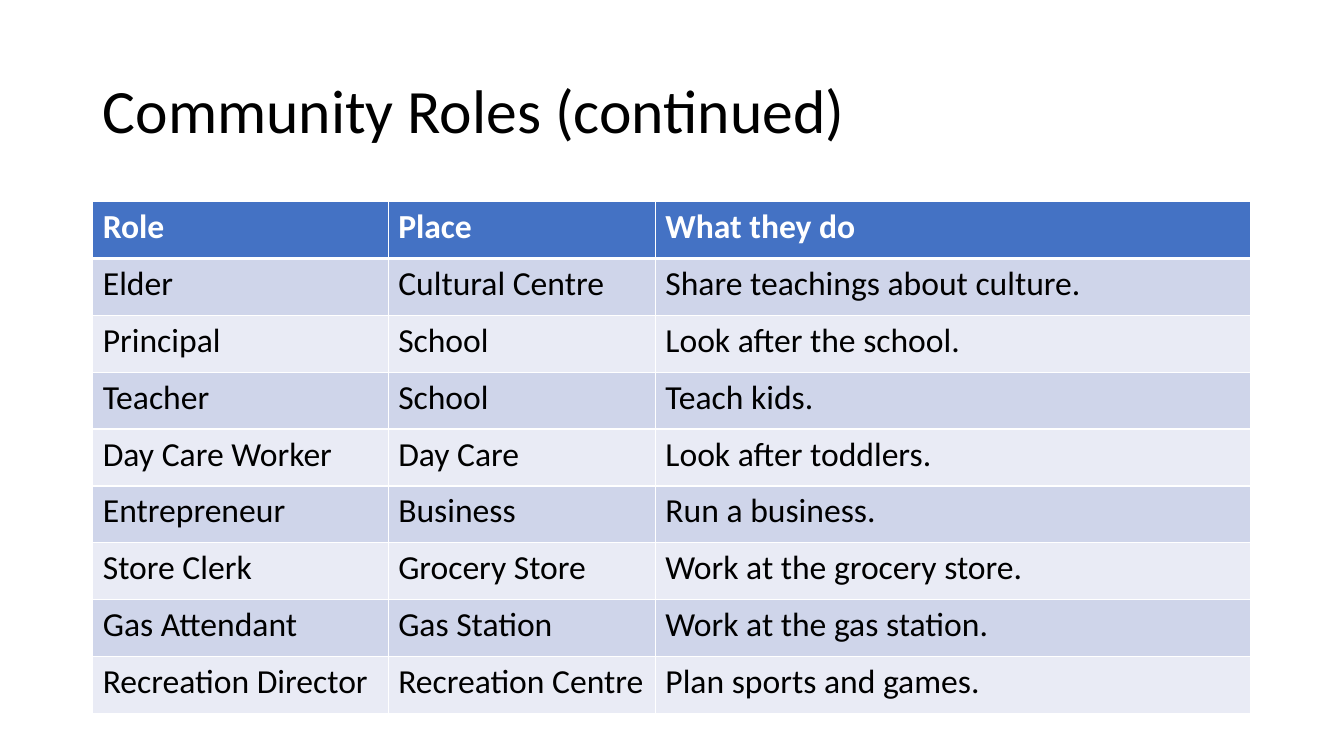
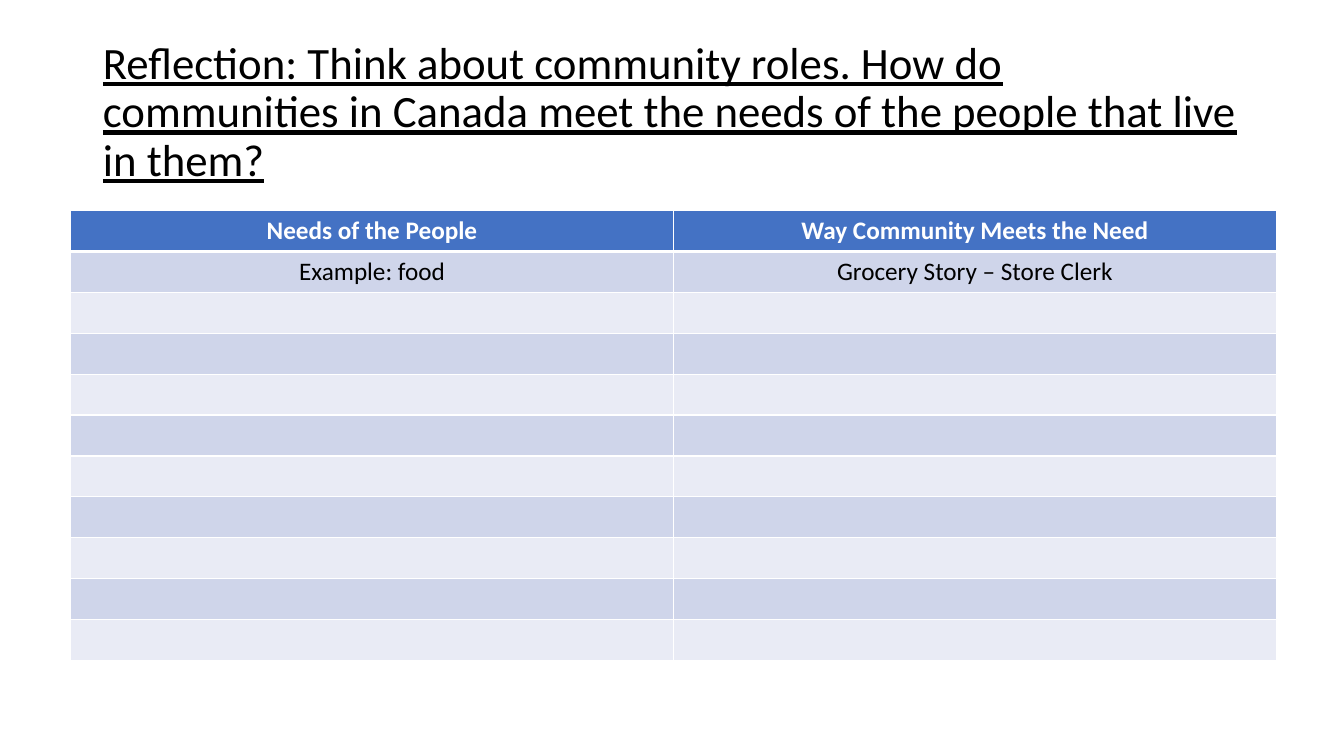
from lxml import etree
from pptx import Presentation
from pptx.dml.color import RGBColor
from pptx.enum import text
from pptx.oxml import ns
from pptx.util import Inches, Pt

FONT = "Calibri"
BLACK = RGBColor(0x00, 0x00, 0x00)
WHITE = RGBColor(0xFF, 0xFF, 0xFF)
HEADER_BLUE = RGBColor(0x44, 0x72, 0xC4)
BANDS = (RGBColor(0xCF, 0xD5, 0xEA), RGBColor(0xE9, 0xEB, 0xF5))
TITLE_BOX = (0.92, 0.4, 11.5, 1.45)
TITLE_ONLY = 5

ROLES = [
    ("Role", "Place", "What they do"),
    ("Elder", "Cultural Centre", "Share teachings about culture."),
    ("Principal", "School", "Look after the school."),
    ("Teacher", "School", "Teach kids."),
    ("Day Care Worker", "Day Care", "Look after toddlers."),
    ("Entrepreneur", "Business", "Run a business."),
    ("Store Clerk", "Grocery Store", "Work at the grocery store."),
    ("Gas Attendant", "Gas Station", "Work at the gas station."),
    ("Recreation Director", "Recreation Centre", "Plan sports and games."),
]
NEEDS = [
    ("Needs of the People", "Way Community Meets the Need"),
    ("Example: food", "Grocery Story – Store Clerk"),
] + [("", "")] * 9


def style_runs(paragraph, size, color, bold=False, underline=False):
    for run in paragraph.runs:
        font = run.font
        font.name, font.size, font.color.rgb = FONT, Pt(size), color
        font.bold, font.underline = bold, underline


def add_titled_slide(deck, title, size, underline=False):
    slide = deck.slides.add_slide(deck.slide_layouts[TITLE_ONLY])
    heading = slide.shapes.title
    heading.left, heading.top, heading.width, heading.height = map(Inches, TITLE_BOX)
    frame = heading.text_frame
    frame.text = title
    frame.word_wrap = True
    frame.auto_size = text.MSO_AUTO_SIZE.NONE
    frame.vertical_anchor = text.MSO_ANCHOR.MIDDLE
    paragraph = frame.paragraphs[0]
    paragraph.alignment = text.PP_ALIGN.LEFT
    paragraph.line_spacing = 0.9
    style_runs(paragraph, size, BLACK, underline=underline)
    return slide


def set_borders(cell, top, bottom):
    """Draw white borders; top and bottom are widths in points."""
    properties = cell._tc.get_or_add_tcPr()
    for side, width in (("L", 1), ("R", 1), ("T", top), ("B", bottom)):
        line = etree.SubElement(properties, ns.qn(f"a:ln{side}"), w=str(Pt(width)))
        fill = etree.SubElement(line, ns.qn("a:solidFill"))
        etree.SubElement(fill, ns.qn("a:srgbClr"), val=str(WHITE))


def add_banded_table(slide, rows, box, column_widths, size, align):
    frame = slide.shapes.add_table(len(rows), len(column_widths), *map(Inches, box))
    table = frame.table
    for column, width in zip(table.columns, column_widths):
        column.width = Inches(width)
    for r, values in enumerate(rows):
        is_header = r == 0
        table.rows[r].height = Inches(box[3] / len(rows))
        for c, value in enumerate(values):
            cell = table.cell(r, c)
            set_borders(cell, top=3 if r == 1 else 1, bottom=3 if is_header else 1)
            cell.fill.solid()
            cell.fill.fore_color.rgb = HEADER_BLUE if is_header else BANDS[(r - 1) % 2]
            cell.text_frame.text = value
            paragraph = cell.text_frame.paragraphs[0]
            paragraph.alignment = align
            style_runs(paragraph, size, WHITE if is_header else BLACK, bold=is_header)


def add_roles_slide(deck):
    slide = add_titled_slide(deck, "Community Roles (continued)", 44)
    add_banded_table(slide, ROLES, (0.92, 2, 11.48, 5.08), (2.93, 2.65, 5.9),
                     24, text.PP_ALIGN.LEFT)


def add_reflection_slide(deck):
    slide = add_titled_slide(
        deck,
        "Reflection: Think about community roles. How do communities in Canada "
        "meet the needs of the people that live in them?",
        32, underline=True)
    add_banded_table(slide, NEEDS, (0.7, 2.09, 11.96, 4.46), (5.98, 5.98),
                     18, text.PP_ALIGN.CENTER)


def main():
    deck = Presentation()
    deck.slide_width, deck.slide_height = Inches(13.33), Inches(7.5)
    add_roles_slide(deck)
    add_reflection_slide(deck)
    deck.save("out.pptx")


if __name__ == "__main__":
    main()
